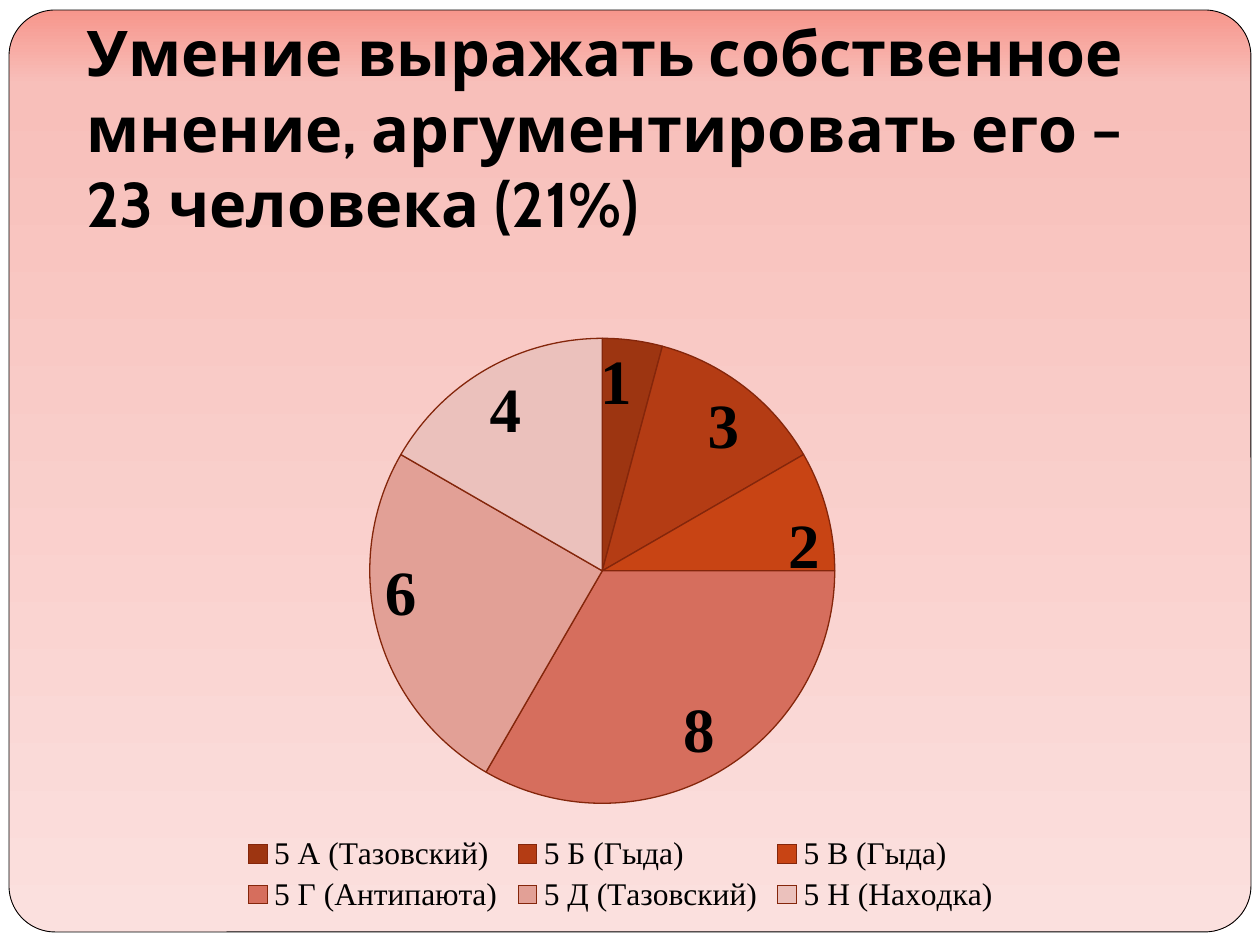
"""Build a slide with a title and a pie chart of pupils by class."""
from dataclasses import dataclass

from lxml import etree
from pptx import Presentation, util as u
from pptx.chart.data import CategoryChartData
from pptx.dml.color import RGBColor
from pptx.enum import chart as charts, shapes, text
from pptx.oxml import parse_xml
from pptx.oxml.ns import nsdecls, qn


@dataclass(frozen=True)
class Theme:
    ink: str = "000000"
    paper: str = "FFFFFF"
    gradient: tuple = ((0, "F7968C"), (8, "F8BFBA"), (100, "FBE0DE"))
    slices: tuple = ("9D3511", "B43C14", "C84414", "D66E5D", "E2A096", "EBC1BC")
    slice_line: str = "84260B"
    title_font: str = "Cabin"
    chart_font: str = "Times New Roman"
    large: int = 36
    small: int = 18


THEME = Theme()
SCALE = 914400 / 126
TITLE_LINES = (
    "Умение выражать собственное мнение, аргументировать его – ",
    "23 человека (21%)",
)
PUPILS = {
    "5 А (Тазовский)": 1,
    "5 Б (Гыда)": 3,
    "5 В (Гыда)": 2,
    "5 Г (Антипаюта)": 8,
    "5 Д (Тазовский)": 6,
    "5 Н (Находка)": 4,
}


def px(*lengths):
    return [u.Emu(round(length * SCALE)) for length in lengths]


def color(value):
    return RGBColor.from_string(value)


def style_font(font, name, size, bold=False):
    font.name, font.size, font.bold = name, u.Pt(size), bold
    font.color.rgb = color(THEME.ink)


def add_panel(slide, kind, box):
    panel = slide.shapes.add_shape(kind, *px(*box))
    panel.shadow.inherit = False
    panel.fill.solid()
    panel.fill.fore_color.rgb = color(THEME.paper)
    panel.line.fill.background()
    return panel


def fill_gradient(shape, stops):
    shape.fill.gradient()
    shape.fill.gradient_angle = 270
    stop_list = shape.element.spPr.find(qn("a:gradFill")).find(qn("a:gsLst"))
    for stop in list(stop_list):
        stop_list.remove(stop)
    for position, value in stops:
        stop = etree.SubElement(stop_list, qn("a:gs"), pos=str(position * 1000))
        etree.SubElement(stop, qn("a:srgbClr"), val=value)


def add_background(slide):
    add_panel(slide, shapes.MSO_SHAPE.RECTANGLE, (0, 0, 1260, 945))
    card = add_panel(slide, shapes.MSO_SHAPE.ROUNDED_RECTANGLE, (9, 10, 1242, 922))
    card.adjustments[0] = 0.05
    fill_gradient(card, THEME.gradient)
    card.line.color.rgb = color(THEME.ink)
    card.line.width = u.Pt(0.5)


def set_title(slide, lines, box):
    title = slide.shapes.title
    slide.shapes.element.append(title.element)
    title.left, title.top, title.width, title.height = px(*box)
    frame = title.text_frame
    frame.word_wrap = True
    frame.auto_size = text.MSO_AUTO_SIZE.NONE
    frame.vertical_anchor = text.MSO_ANCHOR.BOTTOM
    frame.margin_left = frame.margin_right = frame.margin_bottom = u.Inches(0.1)
    frame.margin_top = u.Inches(0.05)
    paragraph = frame.paragraphs[0]
    paragraph.alignment = text.PP_ALIGN.LEFT
    for index, line in enumerate(lines):
        if index:
            paragraph.add_line_break()
        run = paragraph.add_run()
        run.text = line
        style_font(run.font, THEME.title_font, THEME.large, bold=True)


def place_plot(chart, x, y, w, h):
    plot_area = chart.plots[0]._element.getparent()
    for layout in plot_area.findall(qn("c:layout")):
        plot_area.remove(layout)
    sizes = "".join(
        f'<c:{tag} val="{value}"/>' for tag, value in zip("xywh", (x, y, w, h))
    )
    plot_area.insert(0, parse_xml(
        f'<c:layout {nsdecls("c")}><c:manualLayout><c:layoutTarget val="inner"/>'
        f'<c:xMode val="edge"/><c:yMode val="edge"/>{sizes}'
        "</c:manualLayout></c:layout>"
    ))


def add_pie(slide, values, box):
    data = CategoryChartData()
    data.categories = list(values)
    data.add_series("Series 1", list(values.values()))
    chart = slide.shapes.add_chart(charts.XL_CHART_TYPE.PIE, *px(*box), data).chart
    chart.has_title = False
    style_font(chart.font, THEME.chart_font, THEME.small)
    chart.has_legend = True
    chart.legend.position = charts.XL_LEGEND_POSITION.BOTTOM
    chart.legend.include_in_layout = False
    style_font(chart.legend.font, THEME.chart_font, THEME.small)

    plot = chart.plots[0]
    plot.vary_by_categories = True
    plot.has_data_labels = True
    labels = plot.data_labels
    labels.show_value = True
    labels.show_percentage = False
    labels.position = charts.XL_LABEL_POSITION.INSIDE_END
    style_font(labels.font, THEME.chart_font, THEME.large, bold=True)
    for index, value in enumerate(THEME.slices):
        style = plot.series[0].points[index].format
        style.fill.solid()
        style.fill.fore_color.rgb = color(value)
        style.line.color.rgb = color(THEME.slice_line)
        style.line.width = u.Pt(0.75)
    place_plot(chart, 0.29, 0.14, 0.39, 0.69)


def main():
    presentation = Presentation()
    presentation.slide_width, presentation.slide_height = px(1260, 945)
    slide = presentation.slides.add_slide(presentation.slide_layouts[5])
    add_background(slide)
    set_title(slide, TITLE_LINES, (74, 96, 1120, 157))
    add_pie(slide, PUPILS, (15, 244, 1211, 674))
    presentation.save("out.pptx")


if __name__ == "__main__":
    main()
